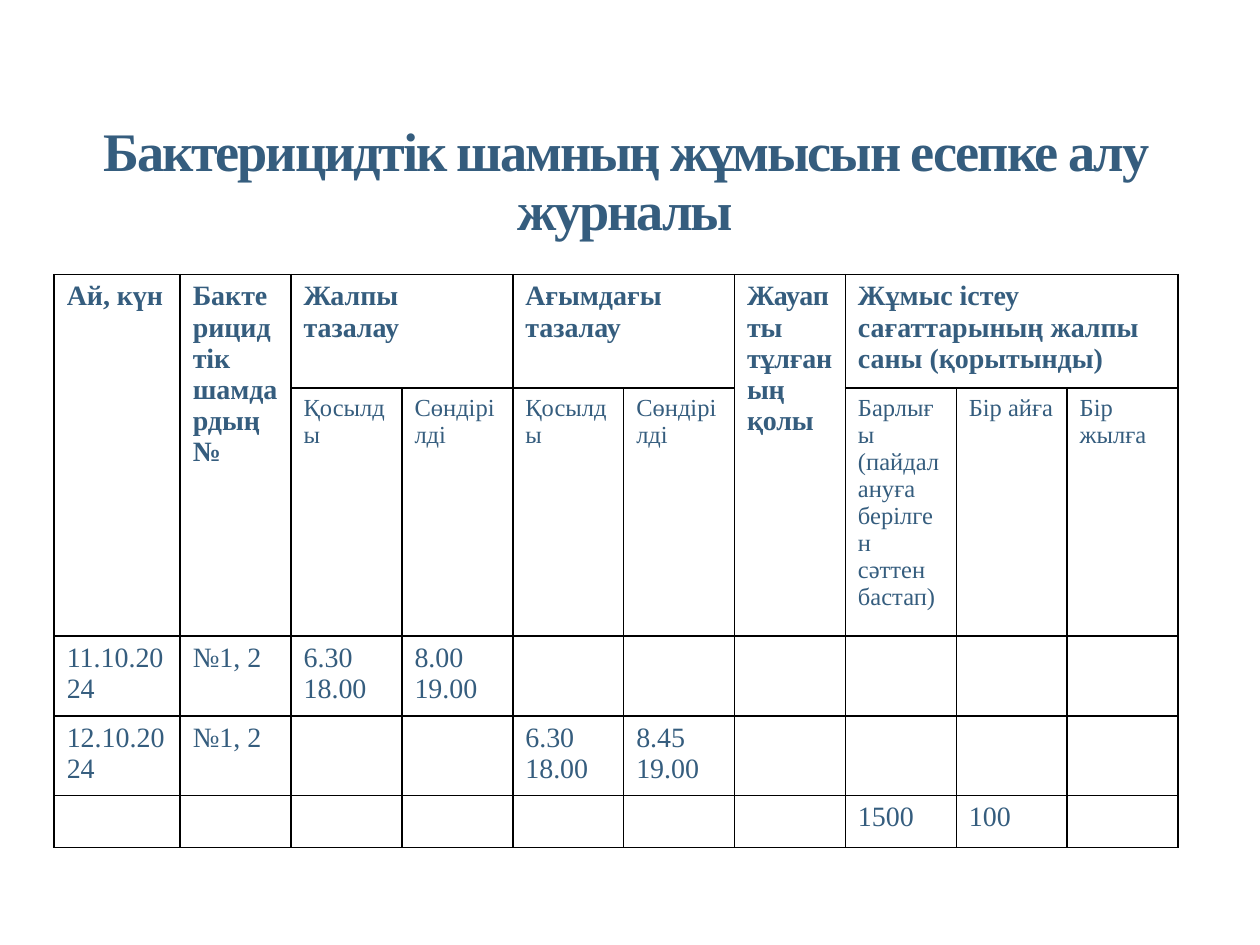
"""Build the slide with the logbook table for germicidal lamps."""
from dataclasses import dataclass

from lxml.etree import SubElement
from pptx import Presentation
from pptx.dml.color import RGBColor
from pptx.enum.text import MSO_ANCHOR, PP_ALIGN
from pptx.oxml.ns import qn
from pptx.table import Table, _Cell
from pptx.text.text import TextFrame
from pptx.util import Inches, Pt

BLUE = RGBColor(0x35, 0x5D, 0x7E)
BLACK = RGBColor(0, 0, 0)
FACE = "Times New Roman"
COLS = [1] + [0.88] * 9
ROWS = [0.41] * 5


@dataclass(frozen=True)
class Entry:
    row: int
    col: int
    text: str
    size: int = 16
    bold: bool = False
    down: int = 1
    wide: int = 1
    gap: float = 0


HEADS = [
    Entry(0, 0, "Ай, күн", bold=True, down=2),
    Entry(0, 1, "Бактерицидтік шамдардың №", bold=True, down=2),
    Entry(0, 2, "Жалпы тазалау", bold=True, wide=2),
    Entry(0, 4, "Ағымдағы тазалау", bold=True, wide=2),
    Entry(0, 6, "Жауапты тұлғаның қолы", bold=True, down=2, gap=-0.1),
    Entry(0, 7, "Жұмыс істеу сағаттарының жалпы саны (қорытынды)", bold=True, wide=3),
]
SUBS = [
    Entry(1, col, text, size=14)
    for col, text in {
        2: "Қосылды",
        3: "Сөндірілді",
        4: "Қосылды",
        5: "Сөндірілді",
        7: "Барлығы (пайдалануға берілген сәттен бастап)",
        8: "Бір айға",
        9: "Бір жылға",
    }.items()
]
LOGS = [
    Entry(2, 0, "11.10.2024"),
    Entry(2, 1, "№1, 2"),
    Entry(2, 2, "6.30\n18.00"),
    Entry(2, 3, "8.00\n19.00"),
    Entry(3, 0, "12.10.2024"),
    Entry(3, 1, "№1, 2"),
    Entry(3, 4, "6.30\n18.00"),
    Entry(3, 5, "8.45\n19.00"),
    Entry(4, 7, "1500"),
    Entry(4, 8, "100"),
]


def write(frame: TextFrame, text: str, size: int, bold: bool, gap: float) -> None:
    """Fill a frame with text in the slide's face and colour."""
    frame.text = text
    form = {"name": FACE, "size": Pt(size), "bold": bold}
    for para in frame.paragraphs:
        for run in para.runs:
            for key, value in form.items():
                setattr(run.font, key, value)
            run.font.color.rgb = BLUE
            if gap:
                run.font._element.set("spc", str(round(gap * 100)))


def rule(cell: _Cell) -> None:
    """Give a cell four black borders and no fill."""
    props = cell._tc.get_or_add_tcPr()
    for side in ("lnL", "lnR", "lnT", "lnB"):
        line = SubElement(props, qn(f"a:{side}"), w=str(Pt(1)))
        fill = SubElement(line, qn("a:solidFill"))
        SubElement(fill, qn("a:srgbClr"), val=str(BLACK))
    cell.fill.background()


def enter(table: Table, entry: Entry) -> None:
    """Write an entry, merging the cells that it covers."""
    cell = table.cell(entry.row, entry.col)
    if entry.down * entry.wide > 1:
        last = table.cell(entry.row + entry.down - 1, entry.col + entry.wide - 1)
        cell.merge(last)
    write(cell.text_frame, entry.text, entry.size, entry.bold, entry.gap)


def main() -> None:
    """Build and save the slide."""
    deck = Presentation()
    deck.slide_width, deck.slide_height = Inches(10), Inches(7.5)
    shapes = deck.slides.add_slide(deck.slide_layouts[6]).shapes

    title = shapes.add_textbox(Inches(0.54), Inches(0.55), Inches(8.84), Inches(1.81))
    frame = title.text_frame
    write(frame, "Бактерицидтік шамның жұмысын есепке алу журналы", 31, True, -1.2)
    for key, value in {"word_wrap": True, "vertical_anchor": MSO_ANCHOR.MIDDLE}.items():
        setattr(frame, key, value)
    for key, value in {"alignment": PP_ALIGN.CENTER, "line_spacing": 0.9}.items():
        setattr(frame.paragraphs[0], key, value)

    grid = shapes.add_table(
        len(ROWS), len(COLS), Inches(0.43), Inches(2.18), Inches(8.94), Inches(4.54)
    )
    table = grid.table
    for key in ("first_row", "horz_banding"):
        setattr(table, key, False)
    for col, width in zip(table.columns, COLS):
        col.width = Inches(width)
    for row, height in zip(table.rows, ROWS):
        row.height = Inches(height)
    grid.height = Inches(4.54)
    for cell in table.iter_cells():
        rule(cell)
    for entry in HEADS + SUBS + LOGS:
        enter(table, entry)

    deck.save("out.pptx")


if __name__ == "__main__":
    main()
